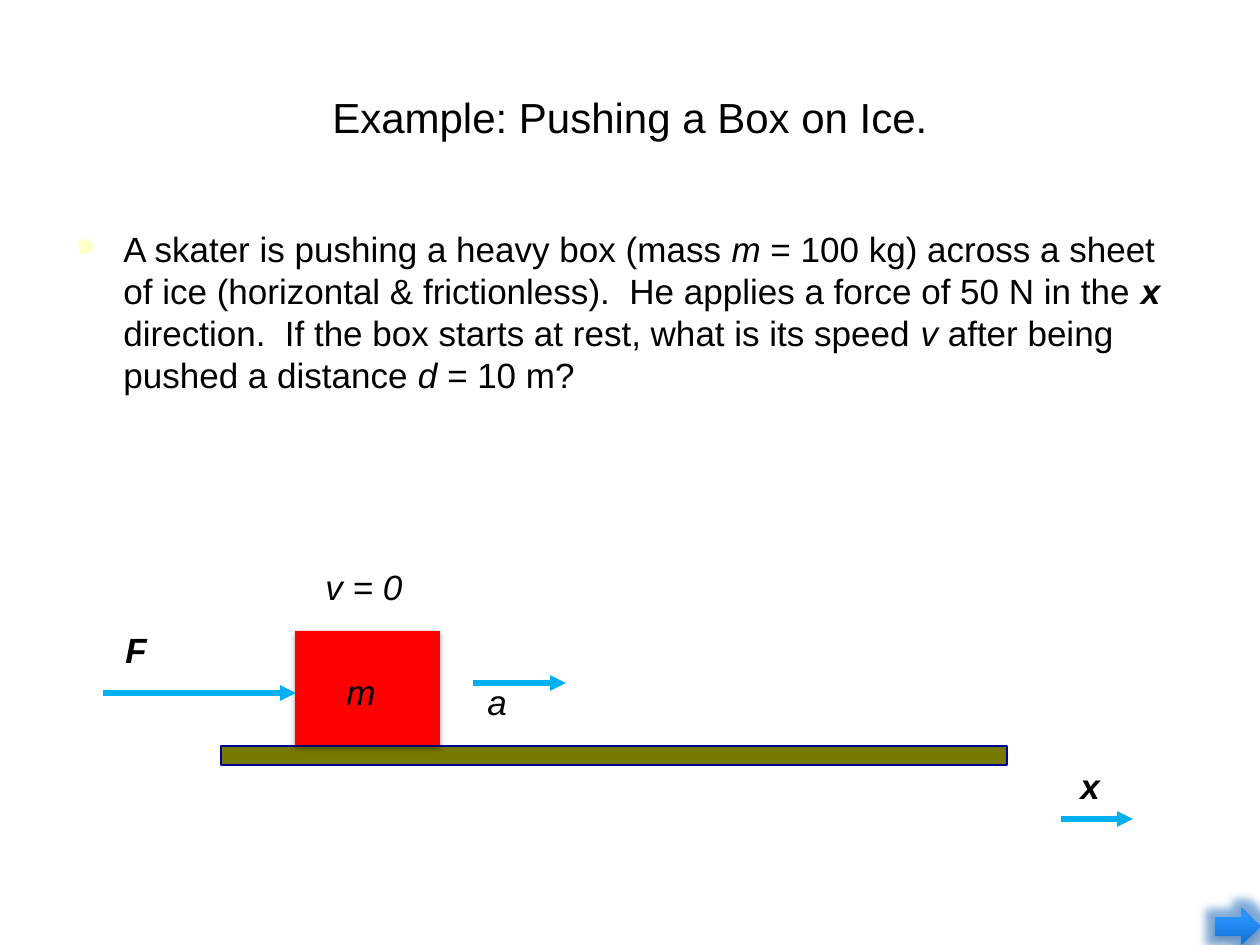
from dataclasses import dataclass

from lxml import etree
from pptx import Presentation
from pptx import util as u
from pptx.dml.color import RGBColor
from pptx.enum import shapes, text
from pptx.oxml import parse_xml
from pptx.oxml.ns import nsdecls, qn

SCALE = 914400 / 126


@dataclass(frozen=True)
class Theme:
    font: str = "Arial"
    title: int = 24
    body: int = 20
    ink: str = "000000"
    bullet: str = "FFFFCC"
    ice: str = "767900"
    edge: str = "010199"
    box: str = "FF0000"
    arrow: str = "00B0F0"
    dark: str = "0F72D5"
    light: str = "2994FF"
    glow: str = "2B7FD9"


THEME = Theme()
SHADOW = (
    '<a:outerShdw blurRad="39400" dist="22900" dir="5400000" rotWithShape="0">'
    '<a:srgbClr val="000000"><a:alpha val="35000"/></a:srgbClr></a:outerShdw>'
)
GLOW = (
    f'<a:glow rad="127000"><a:srgbClr val="{THEME.glow}">'
    '<a:alpha val="50000"/></a:srgbClr></a:glow>'
)


def px(*sizes):
    return [u.Emu(round(size * SCALE)) for size in sizes]


def color(code):
    return RGBColor.from_string(code)


def effect(item, inner=""):
    props = item._element.spPr
    for old in props.findall(qn("a:effectLst")):
        props.remove(old)
    props.append(parse_xml(f'<a:effectLst {nsdecls("a")}>{inner}</a:effectLst>'))


def add_text(slide, area, runs, size=THEME.body, wrap=False, align=None,
             anchor=text.MSO_ANCHOR.TOP, lead=None, before=0):
    frame = slide.shapes.add_textbox(*px(*area)).text_frame
    frame.word_wrap = wrap
    frame.vertical_anchor = anchor
    para = frame.paragraphs[0]
    para.alignment = align
    para.line_spacing = lead
    para.space_before = u.Pt(before)
    for words, style in runs:
        run = para.add_run()
        run.text = words
        font = run.font
        font.name, font.size = THEME.font, u.Pt(size)
        font.color.rgb = color(THEME.ink)
        font.bold, font.italic = "b" in style, "i" in style
    return para


def add_bullet(para):
    props = para._p.get_or_add_pPr()
    indent = px(48)[0]
    props.set("marL", str(indent))
    props.set("indent", str(-indent))
    tint = etree.SubElement(props, qn("a:buClr"))
    etree.SubElement(tint, qn("a:srgbClr"), val=THEME.bullet)
    etree.SubElement(props, qn("a:buSzPct"), val="75000")
    etree.SubElement(props, qn("a:buChar"), char="●")


def add_shape(slide, kind, area, fill=None, line=None):
    item = slide.shapes.add_shape(kind, *px(*area))
    item.shadow.inherit = False
    if fill:
        item.fill.solid()
        item.fill.fore_color.rgb = color(fill)
    if line:
        item.line.color.rgb = color(line)
        item.line.width = u.Pt(1)
    else:
        item.line.fill.background()
    return item


def add_arrow(slide, left, right, level):
    ends = px(left, level, right, level)
    item = slide.shapes.add_connector(shapes.MSO_CONNECTOR.STRAIGHT, *ends)
    item.line.color.rgb = color(THEME.arrow)
    item.line.width = u.Pt(3)
    etree.SubElement(item.line._get_or_add_ln(), qn("a:tailEnd"), type="triangle")
    effect(item)


def add_button(slide):
    item = add_shape(slide, shapes.MSO_SHAPE.RIGHT_ARROW, (1215, 908, 45, 37))
    item.fill.gradient()
    item.fill.gradient_angle = 90
    for stop, tint, place in zip(item.fill.gradient_stops,
                                 (THEME.dark, THEME.light), (0, 0.8)):
        stop.color.rgb = color(tint)
        stop.position = place
    effect(item, GLOW + SHADOW)


def main():
    deck = Presentation()
    deck.slide_width, deck.slide_height = px(1260, 945)
    slide = deck.slides.add_slide(deck.slide_layouts[6])

    add_text(slide, (63, 38, 1134, 157), [("Example: Pushing a Box on Ice.", "")],
             size=THEME.title, wrap=True, align=text.PP_ALIGN.CENTER,
             anchor=text.MSO_ANCHOR.MIDDLE)
    task = [
        ("A skater is pushing a heavy box (mass ", ""),
        ("m", "i"),
        (" = 100 kg) across a sheet of ice (horizontal & frictionless).  "
         "He applies a force of 50 N in the ", ""),
        ("x", "bi"),
        (" direction.  If the box starts at rest, what is its speed ", ""),
        ("v", "i"),
        (" after being pushed a distance ", ""),
        ("d = ", "i"),
        ("10 m?", ""),
    ]
    add_bullet(add_text(slide, (63, 221, 1134, 624), task, wrap=True, before=4))

    rect = shapes.MSO_SHAPE.RECTANGLE
    add_shape(slide, rect, (221, 746, 786, 19), THEME.ice, THEME.edge)
    effect(add_shape(slide, rect, (295, 631, 145, 114), THEME.box), SHADOW)

    for arrow in ((103, 296, 693), (473, 566, 683), (1061, 1133, 819)):
        add_arrow(slide, *arrow)
    for words, style, left, top, width in (
        ("F", "bi", 113, 627, 47),
        ("v = 0", "i", 313, 564, 102),
        ("m", "i", 334, 669, 54),
        ("a", "i", 475, 679, 45),
        ("x", "bi", 1068, 763, 45),
    ):
        add_text(slide, (left, top, width, 50), [(words, style)], lead=0.9, before=6)

    add_button(slide)
    deck.save("out.pptx")


if __name__ == "__main__":
    main()
